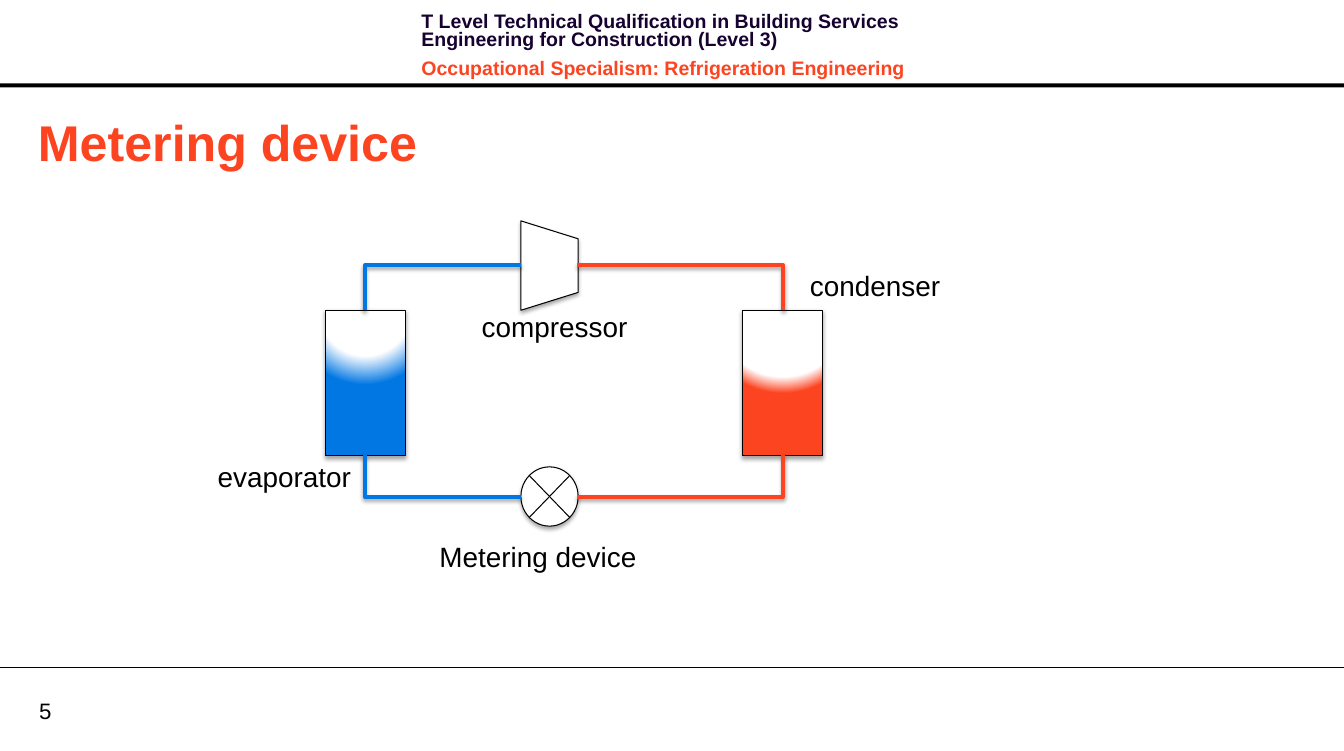
from dataclasses import dataclass
from typing import NamedTuple, Optional

from pptx import Presentation
from pptx.dml.color import RGBColor
from pptx.enum.shapes import MSO_CONNECTOR, MSO_SHAPE
from pptx.enum.text import MSO_ANCHOR
from pptx.oxml import parse_xml
from pptx.oxml.ns import nsdecls, qn
from pptx.util import Inches, Pt

BLACK = RGBColor(0x00, 0x00, 0x00)
WHITE = RGBColor(0xFF, 0xFF, 0xFF)
NAVY = RGBColor(0x17, 0x01, 0x30)
HOT = RGBColor(0xFC, 0x44, 0x21)
COLD = RGBColor(0x00, 0x77, 0xE3)
FONT = "Arial"
SLIDE_WIDTH, SLIDE_HEIGHT = 13.39, 7.48


class Box(NamedTuple):
    left: float
    top: float
    width: float
    height: float

    def lengths(self) -> list:
        return [Inches(value) for value in self]


@dataclass
class Label:
    text: str
    box: Box
    size: int = 20
    color: RGBColor = BLACK
    bold: bool = False
    anchor: MSO_ANCHOR = MSO_ANCHOR.TOP
    margin: Optional[float] = None


@dataclass
class Liquid:
    """Fill of a vessel: white down to one percentage, full colour from another."""
    color: RGBColor
    white_until: int
    full_from: int


@dataclass
class Component:
    preset: MSO_SHAPE
    box: Box
    rotation: int = 0
    liquid: Optional[Liquid] = None


@dataclass
class Pipe:
    """Runs sideways from start, then turns vertically to end."""
    start: tuple
    end: tuple
    color: RGBColor


LABELS = [
    Label("5", Box(0.39, 6.94, 0.64, 0.27), 16, anchor=MSO_ANCHOR.MIDDLE, margin=0),
    Label("Metering device", Box(0.28, 1.05, 12.72, 0.71), 36, HOT, True, MSO_ANCHOR.MIDDLE),
    Label("condenser", Box(7.97, 2.63, 1.83, 0.47)),
    Label("evaporator", Box(2.07, 4.53, 1.83, 0.47)),
    Label("compressor", Box(4.7, 3.03, 1.83, 0.47)),
    Label("Metering device", Box(4.28, 5.33, 2.27, 0.47)),
]
HEADER = [
    ("T Level Technical Qualification in Building Services "
     "Engineering for Construction (Level 3)", NAVY),
    ("Occupational Specialism: Refrigeration Engineering", HOT),
]
COMPONENTS = [
    Component(MSO_SHAPE.RECTANGLE, Box(3.24, 3.09, 0.8, 1.45), liquid=Liquid(COLD, 55, 90)),
    Component(MSO_SHAPE.RECTANGLE, Box(7.4, 3.09, 0.8, 1.45), liquid=Liquid(HOT, 80, 100)),
    Component(MSO_SHAPE.FLOWCHART_MANUAL_OPERATION, Box(5.03, 2.36, 0.89, 0.57), 270),
    Component(MSO_SHAPE.FLOWCHART_SUMMING_JUNCTION, Box(5.19, 4.65, 0.57, 0.59)),
]
VESSEL_TOP, VESSEL_BOTTOM = 3.09, 4.53
PIPES = [
    Pipe((start_x, start_y), (end_x, end_y), color)
    for start_x, end_x, color in [(5.75, 7.8, HOT), (5.19, 3.64, COLD)]
    for start_y, end_y in [(2.64, VESSEL_TOP), (4.95, VESSEL_BOTTOM)]
]


def add_effects(shape, shadow: bool) -> None:
    """Give the shape a soft shadow below, or explicitly none."""
    effects = parse_xml(f"<a:effectLst {nsdecls('a')}/>")
    if shadow:
        effects.append(parse_xml(
            f'<a:outerShdw {nsdecls("a")} blurRad="{Pt(3.1)}" dist="{Pt(1.8)}" '
            'dir="5400000" rotWithShape="0"><a:srgbClr val="000000">'
            '<a:alpha val="35000"/></a:srgbClr></a:outerShdw>'))
    shape.element.spPr.append(effects)


def fill_with_liquid(shape, liquid: Liquid) -> None:
    stops = [(0, WHITE), (liquid.white_until, WHITE), (liquid.full_from, liquid.color)]
    stop_xml = "".join(
        f'<a:gs pos="{position * 1000}"><a:srgbClr val="{color}"/></a:gs>'
        for position, color in stops)
    gradient = parse_xml(
        f'<a:gradFill {nsdecls("a")} rotWithShape="1"><a:gsLst>{stop_xml}</a:gsLst>'
        '<a:path path="circle"><a:fillToRect l="50000" t="-80000" r="50000" b="180000"/>'
        '</a:path></a:gradFill>')
    properties = shape.element.spPr
    properties.replace(properties.find(qn("a:solidFill")), gradient)


def add_run(paragraph, text: str, size: int, color: RGBColor, bold: bool) -> None:
    run = paragraph.add_run()
    run.text = text
    run.font.name = FONT
    run.font.size = Pt(size)
    run.font.bold = bold
    run.font.color.rgb = color


def add_label(slide, label: Label) -> None:
    frame = slide.shapes.add_textbox(*label.box.lengths()).text_frame
    frame.word_wrap = True
    frame.vertical_anchor = label.anchor
    if label.margin is not None:
        frame.margin_left = frame.margin_right = Inches(label.margin)
        frame.margin_top = frame.margin_bottom = Inches(label.margin)
    add_run(frame.paragraphs[0], label.text, label.size, label.color, label.bold)


def add_header(slide) -> None:
    bar = slide.shapes.add_shape(
        MSO_SHAPE.RECTANGLE, *Box(0, 0.83, SLIDE_WIDTH, 0.04).lengths())
    bar.fill.solid()
    bar.fill.fore_color.rgb = BLACK
    bar.line.fill.background()
    bar.shadow.inherit = False

    frame = slide.shapes.add_textbox(*Box(4.1, 0.09, 6.14, 0.64).lengths()).text_frame
    frame.word_wrap = True
    for index, (text, color) in enumerate(HEADER):
        paragraph = frame.add_paragraph() if index else frame.paragraphs[0]
        paragraph.line_spacing = Pt(13.1)
        paragraph.space_before = Pt(4 if index else 0)
        paragraph.space_after = Pt(4)
        add_run(paragraph, text, 14, color, True)


def add_component(slide, component: Component) -> None:
    shape = slide.shapes.add_shape(component.preset, *component.box.lengths())
    shape.rotation = component.rotation
    shape.fill.solid()
    shape.fill.fore_color.rgb = WHITE
    shape.line.color.rgb = BLACK
    shape.line.width = Pt(0.75)
    if component.liquid:
        fill_with_liquid(shape, component.liquid)
    add_effects(shape, shadow=True)


def add_line(slide, kind: MSO_CONNECTOR, start: tuple, end: tuple,
             color: RGBColor, width: float, shadow: bool):
    connector = slide.shapes.add_connector(
        kind, *[Inches(value) for value in (*start, *end)])
    connector.line.color.rgb = color
    connector.line.width = Pt(width)
    add_effects(connector, shadow)
    return connector


def add_pipe(slide, pipe: Pipe) -> None:
    connector = add_line(slide, MSO_CONNECTOR.ELBOW, pipe.start, pipe.end, pipe.color, 3, True)
    connector.element.spPr.find(qn("a:prstGeom")).set("prst", "bentConnector2")


def main() -> None:
    presentation = Presentation()
    presentation.slide_width = Inches(SLIDE_WIDTH)
    presentation.slide_height = Inches(SLIDE_HEIGHT)
    slide = presentation.slides.add_slide(presentation.slide_layouts[6])
    add_header(slide)
    add_line(slide, MSO_CONNECTOR.STRAIGHT, (0, 6.65), (SLIDE_WIDTH, 6.65), BLACK, 0.75, False)
    for component in COMPONENTS:
        add_component(slide, component)
    for pipe in PIPES:
        add_pipe(slide, pipe)
    for label in LABELS:
        add_label(slide, label)
    presentation.save("out.pptx")


if __name__ == "__main__":
    main()
